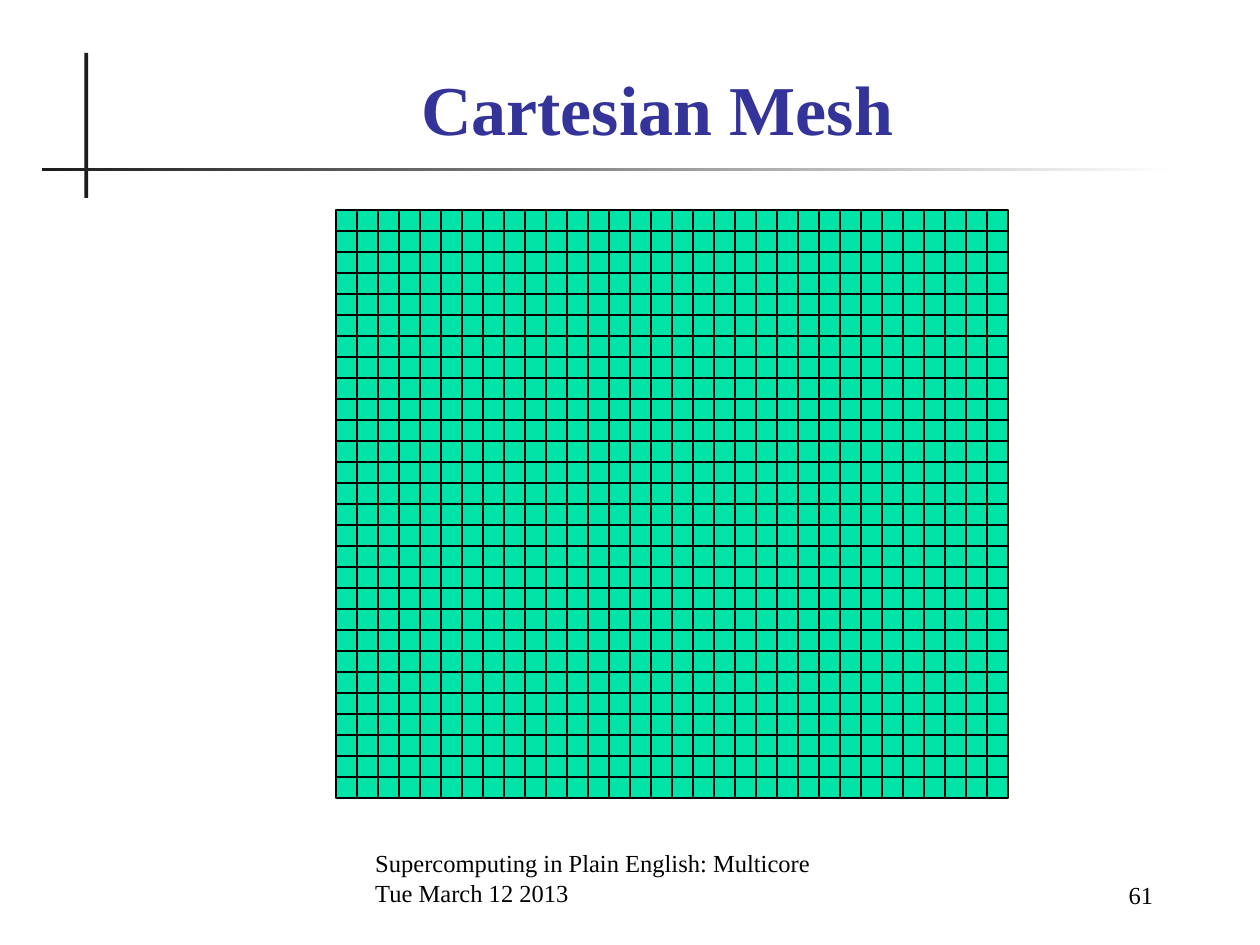
"""Build the Cartesian Mesh slide: a ruled title, a square mesh and a footer."""
import pptx
import pptx.dml.color
import pptx.enum.shapes
import pptx.enum.text
import pptx.oxml
import pptx.util
from dataclasses import dataclass
from pptx.util import Inches

RGB = pptx.dml.color.RGBColor.from_string
ALIGN = pptx.enum.text.PP_ALIGN
RECTANGLE = pptx.enum.shapes.MSO_SHAPE.RECTANGLE


@dataclass(frozen=True)
class Theme:
    font: str = "Times New Roman"
    title: str = "333399"
    ink: str = "000000"
    rule: str = "1C1C1C"
    paper: str = "FFFFFF"
    mesh: str = "00E4A8"
    title_size: int = 40
    footer_size: int = 14
    line_width: float = 0.75


theme = Theme()


def set_text(shape, text, size, color, alignment, bold=False):
    frame = shape.text_frame
    frame.text = text
    frame.word_wrap = True
    frame.auto_size = pptx.enum.text.MSO_AUTO_SIZE.NONE
    frame.vertical_anchor = pptx.enum.text.MSO_ANCHOR.BOTTOM
    for paragraph in frame.paragraphs:
        paragraph.alignment = alignment
        for run in paragraph.runs:
            run.font.name = theme.font
            run.font.size = pptx.util.Pt(size)
            run.font.bold = bold
            run.font.color.rgb = RGB(color)


def add_mesh_line(group, x1, y1, x2, y2):
    line = group.shapes.add_connector(
        pptx.enum.shapes.MSO_CONNECTOR.STRAIGHT, Inches(x1), Inches(y1), Inches(x2), Inches(y2))
    line.line.color.rgb = RGB(theme.ink)
    line.line.width = pptx.util.Pt(theme.line_width)
    line._element.spPr.append(pptx.oxml.parse_xml(
        '<a:effectLst xmlns:a="http://schemas.openxmlformats.org/drawingml/2006/main"/>'))
    return line


presentation = pptx.Presentation()
presentation.slide_width = Inches(10)
presentation.slide_height = Inches(7.5)
slide = presentation.slides.add_slide(presentation.slide_layouts[5])

title = slide.shapes.title
title.left, title.top, title.width, title.height = (
    Inches(0.83), Inches(0.5), Inches(8.77), Inches(0.74))
set_text(title, "Cartesian Mesh", theme.title_size, theme.title, ALIGN.CENTER, bold=True)

vertical_rule = slide.shapes.add_shape(
    RECTANGLE, Inches(0.67), Inches(0.42), Inches(0.03), Inches(1.15))
vertical_rule.fill.solid()
vertical_rule.fill.fore_color.rgb = RGB(theme.rule)
horizontal_rule = slide.shapes.add_shape(
    RECTANGLE, Inches(0.33), Inches(1.33), Inches(9), Inches(0.03))
horizontal_rule.fill.gradient()
horizontal_rule.fill.gradient_angle = 0
for stop, color in zip(horizontal_rule.fill.gradient_stops, (theme.rule, theme.paper)):
    stop.color.rgb = RGB(color)
for rule in (vertical_rule, horizontal_rule):
    rule.line.fill.background()
    rule.shadow.inherit = False

for text, left, top, width, alignment in (
    ("Supercomputing in Plain English: Multicore\nTue March 12 2013", 2.88, 6.75, 4.37, ALIGN.LEFT),
    ("61", 7.83, 6.77, 1.42, ALIGN.RIGHT),
):
    footer = slide.shapes.add_textbox(Inches(left), Inches(top), Inches(width), Inches(0.5))
    set_text(footer, text, theme.footer_size, theme.ink, alignment)

columns, rows, cell = 32, 28, 1 / 6
left, top = 16 * cell, 10 * cell
right, bottom = left + columns * cell, top + rows * cell

group = slide.shapes.add_group_shape()
mesh = group.shapes.add_shape(
    RECTANGLE, Inches(left), Inches(top), Inches(right - left), Inches(bottom - top))
mesh.shadow.inherit = False
mesh.fill.solid()
mesh.fill.fore_color.rgb = RGB(theme.mesh)
mesh.line.color.rgb = RGB(theme.ink)
mesh.line.width = pptx.util.Pt(theme.line_width)

for column in range(1, columns):
    x = left + column * cell
    line = add_mesh_line(group, x, top, x, bottom)
    if column == columns // 2:
        line.begin_connect(mesh, 0)
        line.end_connect(mesh, 2)

for row in range(1, rows):
    y = top + row * cell
    line = add_mesh_line(group, left, y, right, y)
    if row == rows // 2:
        line.begin_connect(mesh, 1)
        line.end_connect(mesh, 3)

presentation.save("out.pptx")
